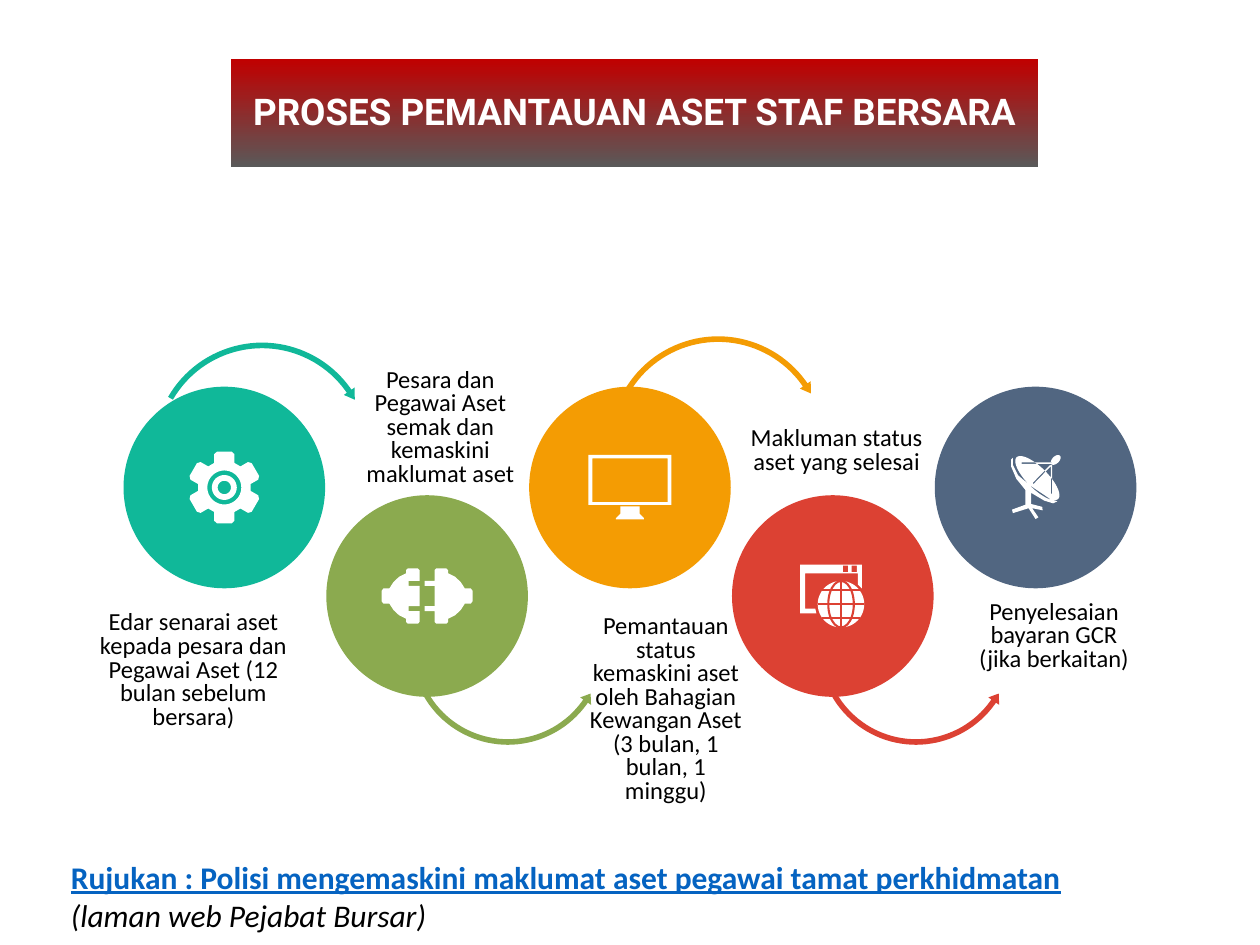
from math import cos, radians, sin

from lxml.etree import SubElement
from pptx import Presentation
from pptx.dml.color import RGBColor
from pptx.enum.shapes import MSO_CONNECTOR, MSO_SHAPE
from pptx.enum.text import MSO_ANCHOR, MSO_AUTO_SIZE, PP_ALIGN
from pptx.oxml.ns import qn
from pptx.util import Pt

# Content: caption, its box, circle colour
TITLE = "PROSES PEMANTAUAN ASET STAF BERSARA"
STEPS = [
    ("Edar senarai aset kepada pesara dan Pegawai Aset (12 bulan sebelum bersara)",
     (49.7, 335.5, 121.7, 95.8), "10B899"),
    ("Pesara dan Pegawai Aset semak dan kemaskini maklumat aset",
     (198, 208, 107.3, 73.4), "8BAA4F"),
    ("Pemantauan status kemaskini aset oleh Bahagian Kewangan Aset "
     "(3 bulan, 1 bulan, 1 minggu)",
     (334, 375, 93, 61.2), "F49C03"),
    ("Makluman status aset yang selesai", (420.5, 244.8, 115.2, 26.6), "DC4133"),
    ("Penyelesaian bayaran GCR (jika berkaitan)",
     (555.8, 350.6, 93, 26.6), "516681"),
]
# Arrow centre x, y, radius; side is 1 above the circles, -1 below
ARROWS = [(149.8, 257.8, 62, 1), (290.2, 370.1, 55.5, -1),
          (410.4, 254.2, 62, 1), (523.4, 370.1, 55.5, -1)]
LINK = "Rujukan : Polisi mengemaskini maklumat aset pegawai tamat perkhidmatan"
NOTE = "(laman web Pejabat Bursar)"

# Circle grid
SIZE, LEFT, STEP, TOPS = 115.2, 70.6, 115.9, (221, 283)
WHITE = "FFFFFF"

deck = Presentation()
deck.slide_width, deck.slide_height = Pt(720), Pt(540)
slide = deck.slides.add_slide(deck.slide_layouts[5])
shapes = slide.shapes


def tint(code):
    return RGBColor.from_string(code)


def paint(shape, code):
    shape.shadow.inherit = False
    shape.fill.solid()
    shape.fill.fore_color.rgb = tint(code)
    shape.line.fill.background()
    return shape


def polar(rad, deg):
    return rad * cos(radians(deg)), rad * sin(radians(deg))


def turn(x, y, deg):
    c, s = cos(radians(deg)), sin(radians(deg))
    return x * c - y * s, x * s + y * c


def oval(x, y, a, b, deg=0):
    spots = [(a * cos(radians(t)), b * sin(radians(t))) for t in range(0, 360, 6)]
    return [(x + p, y + q) for p, q in (turn(*spot, deg) for spot in spots)]


def rect(x1, y1, x2, y2):
    return [(x1, y1), (x2, y1), (x2, y2), (x1, y2)]


def draw(rings, code, x, y):
    """One filled outline; a ring inside another ring is a hole."""
    rings = [[(Pt(x + p), Pt(y + q)) for p, q in ring] for ring in rings]
    form = shapes.build_freeform(*rings[0][0])
    for ring in rings:
        if ring is not rings[0]:
            form.move_to(*ring[0])
        form.add_line_segments(ring[1:], close=True)
    return paint(form.convert_to_shape(), code)


def disc(x, y, a, b, code):
    return paint(shapes.add_shape(
        MSO_SHAPE.OVAL, Pt(x - a), Pt(y - b), Pt(2 * a), Pt(2 * b)), code)


def rule(x1, y1, x2, y2, code):
    line = shapes.add_connector(MSO_CONNECTOR.STRAIGHT, Pt(x1), Pt(y1), Pt(x2), Pt(y2))
    line.line.color.rgb = tint(code)
    line.line.width = Pt(1.2)
    SubElement(line._element.spPr, qn("a:effectLst"))


# Icons, drawn around the circle centre
def gear():
    tooth = [(-5.8, -14), (-5.8, -19), (-4.2, -20.5),
             (4.2, -20.5), (5.8, -19), (5.8, -14)]
    rim = [turn(*spot, 60 * i) for i in range(6) for spot in tooth]
    return [rim] + [oval(0, 0, r, r) for r in (9.7, 7.1, 3.8)]


def plug():
    def half(side, prong):
        top = [(prong, -5.8), (prong, -8.6), (4.3, -8.6), (4.3, -14.8), (5.3, -15.8),
               (11, -15.8), (12, -14.8), (12, -13), (16, -11), (19.2, -8),
               (21.6, -4.3), (25, -4.3), (26, -3)]
        top = [(4.3, -5.8)] + top
        return [(side * p, q) for p, q in top + [(p, -q) for p, q in reversed(top)]]
    return [half(1, -1.4), half(-1, 10.5)]


def screen():
    foot = [(-5.5, 10.8), (5.5, 10.8), (5.5, 15), (8, 17.5), (8, 18.2),
            (-8, 18.2), (-8, 17.5), (-5.5, 15)]
    return [rect(-23.7, -18.7, 23.7, 10), rect(-21.5, -16.6, 21.5, 8.4), foot]


def window():
    frame = [(-18.7, -18), (16.6, -18), (16.6, -4.3), (14.4, -6.5), (14.4, -13),
             (-15.8, -13), (-15.8, 7.2), (-10, 7.2), (-9.4, 10), (-18.7, 10)]
    return [frame] + [rect(x, -17.3, x + 2.9, -13.7) for x in (5.8, 10.8)]


def dish():
    stand = [(-13, -17), (-13, -13), (-10, -7), (-3.6, -1.5), (9, 7), (12.5, 7.9),
             (10, 9), (5, 7.5), (-2.6, 3), (-2.6, 9.4), (3.8, 11), (4, 13),
             (-2, 11.8), (1.6, 17), (0, 18), (-4, 11.8), (-13, 14.6), (-13.5, 12.6),
             (-5.8, 9.8), (-5.8, 1.4), (-11, -5), (-14, -12), (-14, -16)]
    struts = [rect(-8, -14.4, 9, -13.6), rect(8.7, -13, 9.5, 3.5),
              [(8.3, -12.9), (8.8, -12.3), (-1.2, -2), (-1.7, -2.6)]]
    return [stand, oval(1, -5.4, 16.8, 6, 45), oval(11.5, -15.8, 3.4, 2, -45)] + struts


def globe(x, y, code):
    rad = 13.3
    disc(x, y, rad, rad, WHITE)
    ring = disc(x, y, 7.3, rad, code)
    ring.fill.background()
    ring.line.color.rgb = tint(code)
    ring.line.width = Pt(1.2)
    rule(x, y - rad, x, y + rad, code)
    for gap, half in ((-7.9, 10.7), (0, rad), (7.9, 10.7)):
        rule(x - half, y + gap, x + half, y + gap, code)


def arrow(x, y, rad, side, code):
    arc = range(150, 35, -3)
    spots = [polar(rad, t) for t in arc] + [polar(rad, 34.5)]
    spots += [polar(rad + 2.2, 34.5), polar(rad - 1.4, 29), polar(rad - 5.3, 34.5)]
    spots += [polar(rad - 3.2, 34.5)] + [polar(rad - 3.2, t) for t in reversed(arc)]
    draw([[(p, -side * q) for p, q in spots]], code, x, y)


def place(shape, left, top, width, height):
    shape.left, shape.top = Pt(left), Pt(top)
    shape.width, shape.height = Pt(width), Pt(height)


def label(text, box):
    frame = shapes.add_textbox(*map(Pt, box)).text_frame
    frame.word_wrap = True
    frame.vertical_anchor = MSO_ANCHOR.MIDDLE
    frame.margin_left = frame.margin_right = Pt(1.4)
    frame.margin_top = frame.margin_bottom = Pt(1.4)
    para = frame.paragraphs[0]
    para.text = text
    para.alignment, para.line_spacing = PP_ALIGN.CENTER, 0.8
    style(para.font, "Calibri", 14, "000000")


def style(font, name, size, code, bold=False):
    font.name, font.size, font.bold = name, Pt(size), bold
    font.color.rgb = tint(code)


# Circles, icons and captions
icons = (gear, plug, screen, window, dish)
for i, ((text, box, code), icon) in enumerate(zip(STEPS, icons)):
    x, y = LEFT + i * STEP + SIZE / 2, TOPS[i % 2] + SIZE / 2
    disc(x, y, SIZE / 2, SIZE / 2, code)
    draw(icon(), WHITE, x, y)
    if icon is window:
        globe(x + 4.7, y + 4.7, code)
    label(text, box)

# Arrows between the steps
for spot, (_, _, code) in zip(ARROWS, STEPS):
    arrow(*spot, code)

# Title banner
title = shapes.title
place(title, 131.8, 33.8, 461.5, 61.9)
SubElement(title._element.spPr, qn("a:prstGeom"), prst="flowChartAlternateProcess")
title.fill.gradient()
title.fill.gradient_angle = 270
for stop, code in zip(title.fill.gradient_stops, ("C00000", "595959")):
    stop.color.rgb = tint(code)
frame = title.text_frame
frame.auto_size = MSO_AUTO_SIZE.NONE
frame.vertical_anchor = MSO_ANCHOR.MIDDLE
frame.margin_left = frame.margin_right = Pt(5)
head = frame.paragraphs[0]
head.text = TITLE
head.alignment, head.line_spacing = PP_ALIGN.CENTER, 0.9
style(head.font, "Roboto", 21, WHITE, True)

# Reference line
frame = shapes.add_textbox(Pt(33.4), Pt(486.7), Pt(586.8), Pt(50.9)).text_frame
frame.word_wrap = True
para = frame.paragraphs[0]
for text, code, bold in ((LINK, "0563C1", True), (" ", "000000", True),
                         (NOTE, "000000", False)):
    run = para.add_run()
    run.text = text
    style(run.font, "Calibri", 18, code, bold)
    run.font.underline, run.font.italic = text == LINK, text == NOTE

deck.save("out.pptx")
